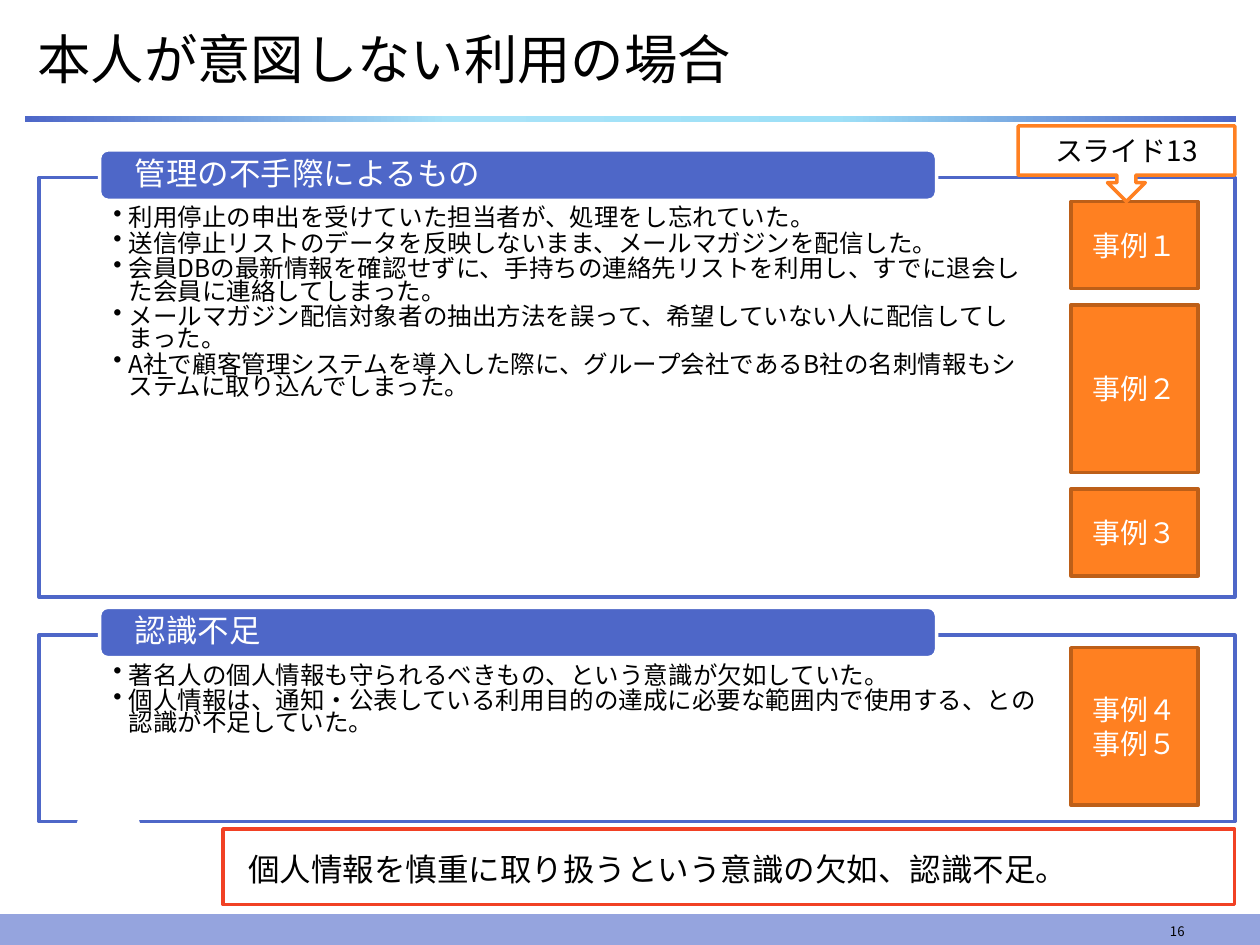
"""Build the slide on unintended use of personal information."""
from lxml import etree
from pptx import Presentation
from pptx import util as u
from pptx.dml.color import RGBColor
from pptx.enum import shapes, text
from pptx.oxml.ns import qn

FONT = "Noto Sans CJK JP"
BLUE, ORANGE, DARK_ORANGE, RED = "4E67C8", "FF8021", "BD5F18", "F14124"
WHITE, BLACK, FOOTER = "FFFFFF", "000000", "95A4DE"
Shape = shapes.MSO_SHAPE
Anchor = text.MSO_ANCHOR
Align = text.PP_ALIGN
CASE_GAP = 0.13
CASE_INSETS = (0.08, 0.01, 0.08, 0.01)

MISMANAGEMENT = [
    "利用停止の申出を受けていた担当者が、処理をし忘れていた。",
    "送信停止リストのデータを反映しないまま、メールマガジンを配信した。",
    "会員DBの最新情報を確認せずに、手持ちの連絡先リストを利用し、すでに退会した会員に連絡してしまった。",
    "メールマガジン配信対象者の抽出方法を誤って、希望していない人に配信してしまった。",
    "A社で顧客管理システムを導入した際に、グループ会社であるB社の名刺情報もシステムに取り込んでしまった。",
]
UNAWARENESS = [
    "著名人の個人情報も守られるべきもの、という意識が欠如していた。",
    "個人情報は、通知・公表している利用目的の達成に必要な範囲内で使用する、との認識が不足していた。",
]


def color(value):
    """Turn a hex string into a colour."""
    return RGBColor.from_string(value)


def add_box(slide, kind, box, fill, line=None, width=2):
    """Add a preset shape with a flat fill and an optional outline."""
    shape = slide.shapes.add_shape(kind, *map(u.Inches, box))
    shape.shadow.inherit = False
    shape.fill.solid()
    shape.fill.fore_color.rgb = color(fill)
    if line:
        shape.line.color.rgb = color(line)
        shape.line.width = u.Pt(width)
    else:
        shape.line.fill.background()
    return shape


def add_bullet(paragraph, indent=0.12):
    """Give a paragraph a bullet with a hanging indent."""
    properties = paragraph._p.get_or_add_pPr()
    properties.set("marL", str(u.Inches(indent)))
    properties.set("indent", str(-u.Inches(indent)))
    etree.SubElement(properties, qn("a:buChar"), char="•")


def write(shape, lines, size, ink=BLACK, align=Align.LEFT, anchor=Anchor.MIDDLE,
          insets=(0.1, 0.05, 0.1, 0.05), spacing=None, after=0, bullet=False):
    """Fill a shape with one paragraph for each line."""
    frame = shape.text_frame
    frame.word_wrap = True
    frame.vertical_anchor = anchor
    (frame.margin_left, frame.margin_top,
     frame.margin_right, frame.margin_bottom) = map(u.Inches, insets)
    for index, line in enumerate(lines):
        paragraph = frame.add_paragraph() if index else frame.paragraphs[0]
        paragraph.alignment = align
        paragraph.space_after = u.Pt(after)
        if spacing:
            paragraph.line_spacing = spacing
        if bullet:
            add_bullet(paragraph)
        run = paragraph.add_run()
        run.text = line
        run.font.size = u.Pt(size)
        run.font.name = FONT
        run.font.color.rgb = color(ink)
        etree.SubElement(run._r.get_or_add_rPr(), qn("a:ea"), typeface=FONT)


def add_text(slide, box, lines, size, **style):
    """Add a text box."""
    write(slide.shapes.add_textbox(*map(u.Inches, box)), lines, size, **style)


def add_title(slide, box, title):
    """Add the title and the gradient rule below it."""
    left, top, width, height = box
    add_text(slide, box, [title], 30.5)
    rule = add_box(slide, Shape.RECTANGLE, (left, top + height + 0.13, width, 0.05), BLUE)
    rule.fill.gradient()
    rule.fill.gradient_angle = 0
    stops = rule._element.spPr.find(qn("a:gradFill")).find(qn("a:gsLst"))
    for stop in list(stops):
        stops.remove(stop)
    for position, value in ((0, BLUE), (35, "A9E3F8"), (67, "9EE0F7"), (100, BLUE)):
        stop = etree.SubElement(stops, qn("a:gs"), pos=str(position * 1000))
        etree.SubElement(stop, qn("a:srgbClr"), val=value)


def add_panel(slide, box, heading, bullets):
    """Add an outlined panel with bullets and a heading tab on its top edge."""
    left, top, width, _ = box
    panel = add_box(slide, Shape.RECTANGLE, box, WHITE, BLUE)
    write(panel, bullets, 14, anchor=Anchor.TOP, insets=(0.59, 0.25, 1.57, 0.11),
          spacing=0.75, after=2, bullet=True)
    tab_box = (left + 0.48, top - 0.22, width * 0.7, 0.4)
    tab = add_box(slide, Shape.ROUNDED_RECTANGLE, tab_box, BLUE, WHITE)
    write(tab, [heading], 18, ink=WHITE, insets=(0.26, 0, 0.26, 0), spacing=0.9)


def add_cases(slide, left, top, width, cases):
    """Stack case boxes downwards with equal gaps."""
    for height, lines in cases:
        case = add_box(slide, Shape.RECTANGLE, (left, top, width, height), ORANGE, DARK_ORANGE)
        write(case, lines, 16, ink=WHITE, align=Align.CENTER, insets=CASE_INSETS)
        top += height + CASE_GAP


def add_callout(slide, box, label):
    """Add the callout that points down to the cases."""
    callout = add_box(slide, Shape.DOWN_ARROW_CALLOUT, box, WHITE, ORANGE)
    write(callout, [label], 16, align=Align.CENTER, insets=CASE_INSETS)


def add_conclusion(slide, box, message):
    """Add the red-framed conclusion."""
    frame = add_box(slide, Shape.RECTANGLE, box, WHITE, RED)
    write(frame, [message], 18, insets=(0.2, 0.24, 0.2, 0.2))


def add_footer(slide, box, number):
    """Add the footer band and the slide number."""
    _, top, _, height = box
    add_box(slide, Shape.RECTANGLE, box, FOOTER, FOOTER, 0.75)
    add_text(slide, (7.17, top, 2.33, height), [number], 7.5,
             align=Align.RIGHT, anchor=Anchor.BOTTOM)


def main():
    """Build and save the slide."""
    presentation = Presentation()
    presentation.slide_width, presentation.slide_height = u.Inches(10), u.Inches(7.5)
    slide = presentation.slides.add_slide(presentation.slide_layouts[6])
    add_footer(slide, (0, 7.26, 10, 0.24), "16")
    add_title(slide, (0.2, 0.14, 9.61, 0.65), "本人が意図しない利用の場合")
    add_panel(slide, (0.31, 1.41, 9.49, 3.33), "管理の不手際によるもの", MISMANAGEMENT)
    add_panel(slide, (0.31, 5.04, 9.49, 1.48), "認識不足", UNAWARENESS)
    add_conclusion(slide, (1.77, 6.58, 8.03, 0.6),
                   "個人情報を慎重に取り扱うという意識の欠如、認識不足。")
    add_cases(slide, 8.5, 1.6, 1.01,
              [(0.69, ["事例１"]), (1.33, ["事例２"]), (0.69, ["事例３"])])
    add_cases(slide, 8.5, 5.14, 1.01, [(1.25, ["事例４", "事例５"])])
    add_callout(slide, (8.08, 1, 1.72, 0.6), "スライド13")
    add_box(slide, Shape.OVAL, (0.6, 6.34, 0.52, 0.52), WHITE)
    presentation.save("out.pptx")


if __name__ == "__main__":
    main()
